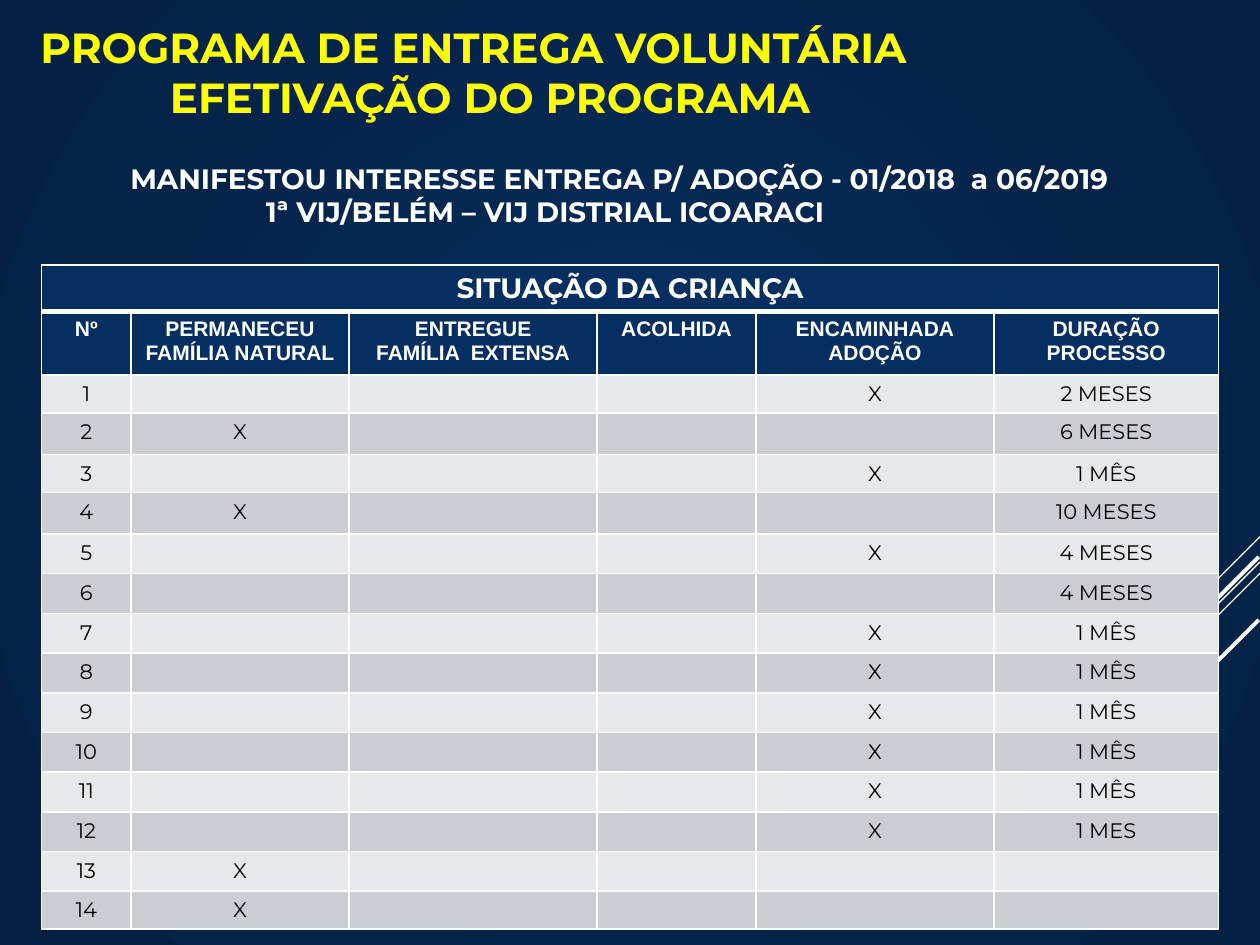
from lxml import etree
from pptx import Presentation
from pptx.dml.color import RGBColor
from pptx.enum.shapes import MSO_CONNECTOR
from pptx.enum.text import PP_ALIGN
from pptx.oxml.ns import qn
from pptx.util import Pt

STRAIGHT = MSO_CONNECTOR.STRAIGHT
LEFT, CENTER = PP_ALIGN.LEFT, PP_ALIGN.CENTER
COLORS = {
    "yellow": "FFFF00", "white": "FFFFFF", "black": "000000",
    "header": "052F61", "light": "E7E8EA", "dark": "CCCDD2",
}
BACKGROUND_STOPS = [(0, "042A56"), (23, "042A56"), (69, "042349"), (97, "042144")]


def write(frame, lines, size, color, font="Montserrat", bold=False, align=CENTER, indents=()):
    """Fill a text frame with one paragraph a line; an empty line keeps the font size."""
    for index, line in enumerate(lines):
        para = frame.paragraphs[0] if index == 0 else frame.add_paragraph()
        para.alignment = align
        if indents:
            para._p.get_or_add_pPr().set("marL", str(Pt(indents[index])))
        if not line:
            end = etree.SubElement(para._p, qn("a:endParaRPr"), sz=str(size * 100))
            etree.SubElement(end, qn("a:latin"), typeface=font)
            continue
        span = para.add_run()
        span.text = line
        span.font.name = font
        span.font.size = Pt(size)
        span.font.bold = bold
        span.font.color.rgb = RGBColor.from_string(COLORS[color])


def set_borders(cell, **widths):
    """Draw white cell borders; the keywords L, R, T and B change a width in points."""
    properties = cell._tc.get_or_add_tcPr()
    for side in "LRTB":
        line = etree.SubElement(properties, qn(f"a:ln{side}"), w=str(Pt(widths.get(side, 1))))
        fill = etree.SubElement(line, qn("a:solidFill"))
        etree.SubElement(fill, qn("a:srgbClr"), val=COLORS["white"])


deck = Presentation()
deck.slide_width, deck.slide_height = Pt(720), Pt(540)
slide = deck.slides.add_slide(deck.slide_layouts[6])

# Radial background
slide.background.fill.gradient()
gradient = slide.background._cSld.find(".//" + qn("a:gradFill"))
for child in list(gradient):
    gradient.remove(child)
stops = etree.SubElement(gradient, qn("a:gsLst"))
for position, color in BACKGROUND_STOPS:
    stop = etree.SubElement(stops, qn("a:gs"), pos=str(position * 1000))
    etree.SubElement(stop, qn("a:srgbClr"), val=color)
circle = etree.SubElement(gradient, qn("a:path"), path="circle")
etree.SubElement(circle, qn("a:fillToRect"), l="50000", t="50000", r="50000", b="50000")

# Diagonal lines at the right edge: start x, start y, run, width
for x, y, run, width in [
    (720, 306.7, 59.8, 0.75),
    (720, 321.1, 194.8, 0.75),
    (720, 327.6, 123.8, 0.75),
    (719.3, 318.2, 113, 2.25),
    (719.3, 354.2, 82, 2.25),
]:
    diagonal = slide.shapes.add_connector(STRAIGHT, Pt(x), Pt(y), Pt(x - run), Pt(y + run))
    diagonal.line.color.rgb = RGBColor.from_string(COLORS["white"])
    diagonal.line.width = Pt(width)
    etree.SubElement(diagonal._element.spPr, qn("a:effectLst"))

# Title and subtitle
for place, lines, size, color, indents in [
    ((-44, 8.6, 691, 114),
     ["PROGRAMA DE ENTREGA VOLUNTÁRIA", "EFETIVAÇÃO DO PROGRAMA"],
     24, "yellow", (60, 134)),
    ((14.4, 88.6, 691, 46),
     ["MANIFESTOU INTERESSE ENTREGA P/ ADOÇÃO - 01/2018  a 06/2019",
      "1ª VIJ/BELÉM – VIJ DISTRIAL ICOARACI"],
     16, "white", (53, 130.5)),
]:
    box = slide.shapes.add_textbox(*map(Pt, place))
    box.text_frame.word_wrap = True
    write(box.text_frame, lines, size, color, bold=True, align=LEFT, indents=indents)

# Table of children
HEADINGS = [
    ["Nº"], ["PERMANECEU", "FAMÍLIA NATURAL"], ["ENTREGUE", "FAMÍLIA  EXTENSA"],
    ["ACOLHIDA"], ["ENCAMINHADA", "ADOÇÃO"], ["DURAÇÃO", "PROCESSO"],
]
STAYED, ADOPTION = 1, 4
CHILDREN = [  # column of the X, duration
    (ADOPTION, "2 MESES"), (STAYED, "6 MESES"), (ADOPTION, "1 MÊS"), (STAYED, "10 MESES"),
    (ADOPTION, "4 MESES"), (None, "4 MESES"), (ADOPTION, "1 MÊS"), (ADOPTION, "1 MÊS"),
    (ADOPTION, "1 MÊS"), (ADOPTION, "1 MÊS"), (ADOPTION, "1 MÊS"), (ADOPTION, "1 MES"),
    (STAYED, ""), (STAYED, ""),
]
COLUMN_WIDTHS = [51.1, 124.6, 141.8, 90.7, 136.1, 128.2]
ROW_HEIGHTS = [26.5, 36.5] + [21.3, 23.8] * 2 + [22.7] * 9 + [21.3]

table = slide.shapes.add_table(
    len(ROW_HEIGHTS), len(COLUMN_WIDTHS),
    Pt(23.8), Pt(151.4), Pt(sum(COLUMN_WIDTHS)), Pt(sum(ROW_HEIGHTS)),
).table
table.first_row = table.horz_banding = False
for column, width in zip(table.columns, COLUMN_WIDTHS):
    column.width = Pt(width)
for row, height in zip(table.rows, ROW_HEIGHTS):
    row.height = Pt(height)

table.cell(0, 0).merge(table.cell(0, len(COLUMN_WIDTHS) - 1))
for row_index, row in enumerate(table.rows):
    for column_index, cell in enumerate(row.cells):
        if row_index == 0:
            set_borders(cell, B=3)
            fill = "header"
            title = "" if cell.is_spanned else "SITUAÇÃO DA CRIANÇA"
            write(cell.text_frame, [title], 16, "white", bold=True)
        elif row_index == 1:
            set_borders(cell, T=3)
            fill = "header"
            write(cell.text_frame, HEADINGS[column_index], 12, "white", font="Arial", bold=True)
        else:
            set_borders(cell)
            fill = "dark" if row_index % 2 else "light"
            number = row_index - 1
            mark, duration = CHILDREN[number - 1]
            values = {0: str(number), mark: "X", 5: duration}
            write(cell.text_frame, [values.get(column_index, "")], 12, "black")
        cell.fill.solid()
        cell.fill.fore_color.rgb = RGBColor.from_string(COLORS[fill])

deck.save("out.pptx")
